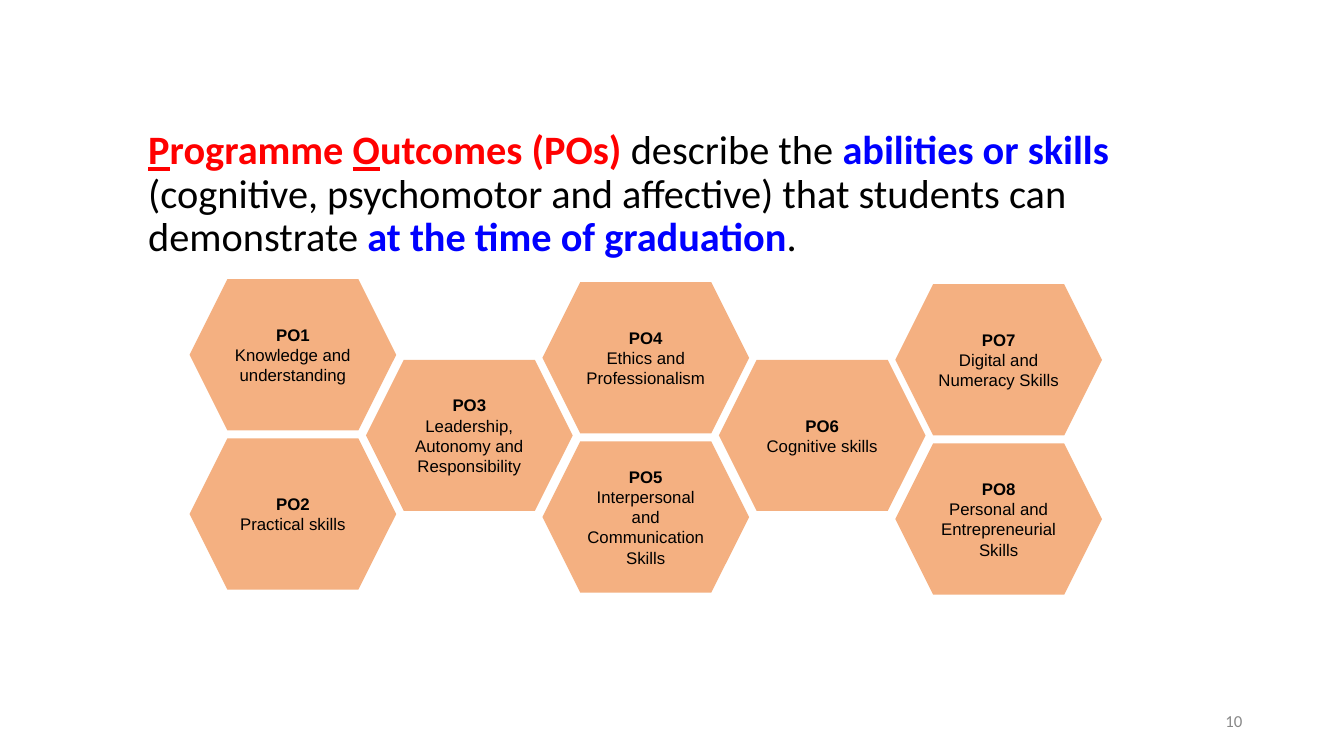
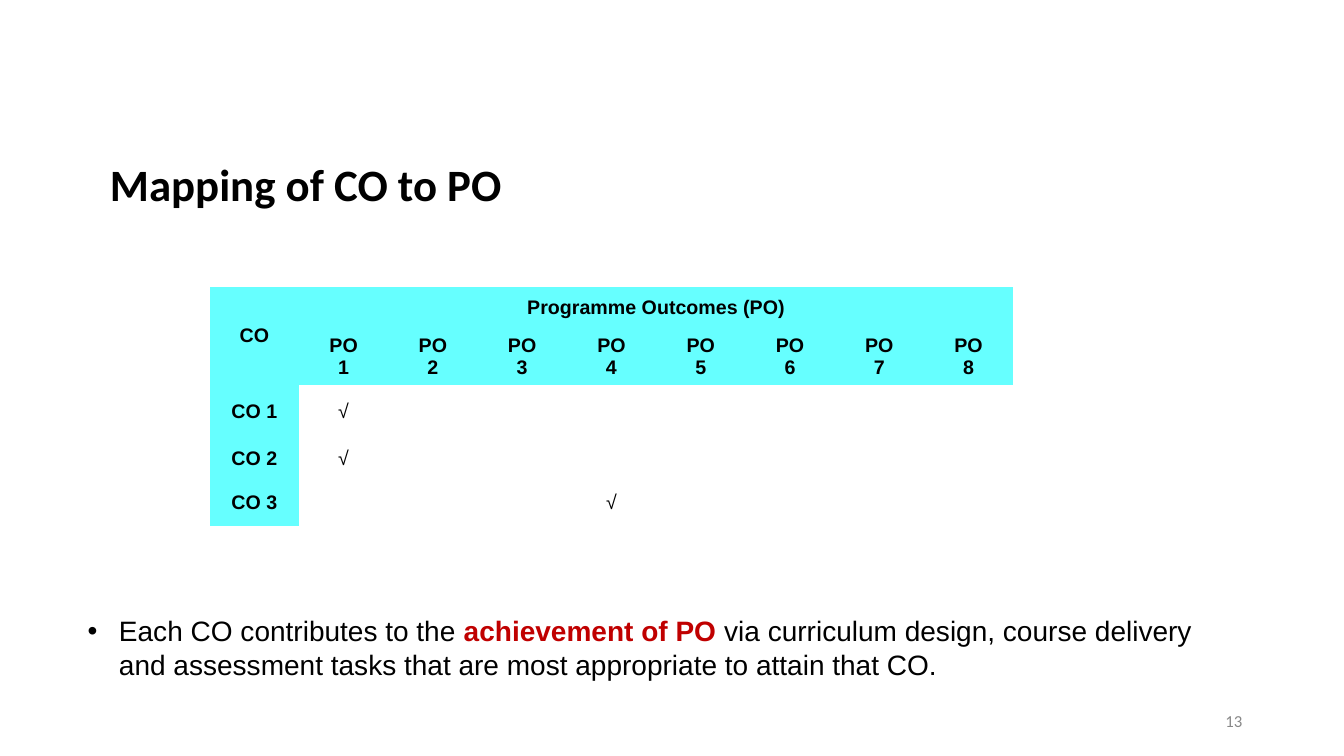
from dataclasses import dataclass

from pptx import Presentation
from pptx.dml.color import RGBColor
from pptx.enum.shapes import MSO_SHAPE
from pptx.enum.text import MSO_ANCHOR, MSO_AUTO_SIZE, PP_ALIGN
from pptx.util import Inches, Pt


@dataclass(frozen=True)
class Theme:
    black: str = "000000"
    red: str = "FF0000"
    blue: str = "0000FF"
    crimson: str = "C00000"
    grey: str = "888888"
    orange: str = "F4B081"
    cyan: str = "66FFFF"
    heading_font: str = "Calibri"
    body_font: str = "Arial"
    statement_size: float = 28.8
    title_size: float = 32
    body_size: float = 20
    table_size: float = 14
    small_size: float = 12


THEME = Theme()
TITLE_AND_CONTENT, TITLE_ONLY = 1, 5
NO_STYLE_NO_GRID = "{2D5ABB26-0587-4C30-8999-92F81FD0307C}"

# Programme outcomes: (top of column, hexagons in it)
OUTCOME_COLUMNS = [
    (2.77, [["PO1", "Knowledge and understanding"], ["PO2", "Practical skills"]]),
    (3.57, [["PO3", "Leadership, Autonomy and Responsibility"]]),
    (2.8, [["PO4", "Ethics and Professionalism"],
           ["PO5", "Interpersonal and", "Communication", "Skills"]]),
    (3.57, [["PO6", "Cognitive skills"]]),
    (2.82, [["PO7", "Digital and Numeracy Skills"],
            ["PO8", "Personal and", "Entrepreneurial", "Skills"]]),
]
OUTCOME_COUNT = 8
# Course outcome -> programme outcome it supports
MAPPING = {"CO 1": 1, "CO 2": 1, "CO 3": 4}


def write(frame, paragraphs, *, size, font=THEME.body_font, color=THEME.black,
          bold=False, align=PP_ALIGN.LEFT, anchor=MSO_ANCHOR.MIDDLE,
          line_spacing=1.0, margin=None, indent=0):
    """Fill a frame; a paragraph is a string or a list of (text, run format)."""
    frame.word_wrap = True
    frame.auto_size = MSO_AUTO_SIZE.NONE
    frame.vertical_anchor = anchor
    for index, content in enumerate(paragraphs):
        paragraph = frame.add_paragraph() if index else frame.paragraphs[0]
        paragraph.alignment = align
        paragraph.line_spacing = line_spacing
        paragraph.space_before = Pt(0)
        if margin is not None:
            properties = paragraph._p.get_or_add_pPr()
            properties.set("marL", str(Inches(margin)))
            properties.set("indent", str(Inches(indent)))
        runs = [(content, {})] if isinstance(content, str) else content
        for text, style in runs:
            run = paragraph.add_run()
            run.text = text
            run.font.name = font
            run.font.size = Pt(size)
            run.font.bold = style.get("bold", bold)
            run.font.underline = style.get("underline", False)
            run.font.color.rgb = RGBColor.from_string(style.get("color", color))


def place(shape, left, top, width, height):
    shape.left, shape.top = Inches(left), Inches(top)
    shape.width, shape.height = Inches(width), Inches(height)
    return shape


def add_title(slide, box, runs, **style):
    title = place(slide.shapes.title, *box)
    write(title.text_frame, [runs], font=THEME.heading_font, line_spacing=0.9, **style)


def add_page_number(slide, number):
    box = slide.shapes.add_textbox(Inches(9.42), Inches(6.95), Inches(3), Inches(0.4))
    write(box.text_frame, [str(number)], size=THEME.small_size,
          font=THEME.heading_font, color=THEME.grey, align=PP_ALIGN.RIGHT)


def add_hexagon(shapes, left, top, lines):
    hexagon = shapes.add_shape(MSO_SHAPE.HEXAGON, Inches(left), Inches(top),
                               Inches(2.05), Inches(1.5))
    hexagon.shadow.inherit = False
    hexagon.fill.solid()
    hexagon.fill.fore_color.rgb = RGBColor.from_string(THEME.orange)
    hexagon.line.fill.background()
    code, *description = lines
    write(hexagon.text_frame, [[(code, {"bold": True})], *description],
          size=THEME.small_size, align=PP_ALIGN.CENTER)


def fill_cell(cell, lines, header=True):
    if header:
        cell.fill.solid()
        cell.fill.fore_color.rgb = RGBColor.from_string(THEME.cyan)
    cell.vertical_anchor = MSO_ANCHOR.MIDDLE
    write(cell.text_frame, lines, size=THEME.table_size, bold=header,
          align=PP_ALIGN.CENTER)


def add_mapping_table(slide):
    row_heights = [0.41, 0.56, 0.53, 0.41, 0.46]
    table = slide.shapes.add_table(
        len(row_heights), OUTCOME_COUNT + 1, Inches(2.08), Inches(2.85),
        Inches(7.97), Inches(sum(row_heights))).table
    table.first_row = table.horz_banding = False
    table._tbl.tblPr[0].text = NO_STYLE_NO_GRID
    for row, height in zip(table.rows, row_heights):
        row.height = Inches(height)

    # Two header rows
    table.cell(0, 0).merge(table.cell(1, 0))
    table.cell(0, 1).merge(table.cell(0, OUTCOME_COUNT))
    fill_cell(table.cell(0, 0), ["CO"])
    fill_cell(table.cell(0, 1), ["Programme Outcomes (PO)"])
    for outcome in range(1, OUTCOME_COUNT + 1):
        fill_cell(table.cell(1, outcome), ["PO", str(outcome)])

    # One row per course outcome
    for row, (course, outcome) in enumerate(MAPPING.items(), start=2):
        fill_cell(table.cell(row, 0), [course])
        fill_cell(table.cell(row, outcome), ["√"], header=False)


def build_outcomes_slide(prs):
    slide = prs.slides.add_slide(prs.slide_layouts[TITLE_ONLY])
    term = {"color": THEME.red, "bold": True}
    initial = {**term, "underline": True}
    emphasis = {"color": THEME.blue, "bold": True}
    add_title(slide, (1.27, 1.21, 11.5, 1.45), [
        ("P", initial), ("rogramme ", term), ("O", initial), ("utcomes (POs)", term),
        (" describe the ", {}), ("abilities or skills ", emphasis),
        ("(cognitive, psychomotor and affective) that students can demonstrate ", {}),
        ("at the time of graduation", emphasis), (".", {}),
    ], size=THEME.statement_size, margin=0.1)

    # Honeycomb of outcomes
    honeycomb = slide.shapes.add_group_shape()
    for column, (top, outcomes) in enumerate(OUTCOME_COLUMNS):
        for row, lines in enumerate(outcomes):
            add_hexagon(honeycomb.shapes, 1.88 + 1.75 * column, top + 1.58 * row, lines)
    add_page_number(slide, 10)


def build_mapping_slide(prs):
    slide = prs.slides.add_slide(prs.slide_layouts[TITLE_AND_CONTENT])
    add_title(slide, (0.99, 1.45, 11.5, 0.82), "Mapping of CO to PO",
              size=THEME.title_size, bold=True)
    add_mapping_table(slide)

    # Closing bullet
    contribution = place(slide.placeholders[1], 0.77, 6.04, 11.51, 0.77)
    write(contribution.text_frame, [[
        ("Each CO contributes to the ", {}),
        ("achievement of PO", {"color": THEME.crimson, "bold": True}),
        (" via curriculum design, course delivery and assessment tasks"
         " that are most appropriate to attain that CO.", {}),
    ]], size=THEME.body_size, anchor=MSO_ANCHOR.TOP, margin=0.31, indent=-0.31)
    add_page_number(slide, 13)


def main():
    prs = Presentation()
    prs.slide_width, prs.slide_height = Inches(13.33), Inches(7.5)
    build_outcomes_slide(prs)
    build_mapping_slide(prs)
    prs.save("out.pptx")


if __name__ == "__main__":
    main()
